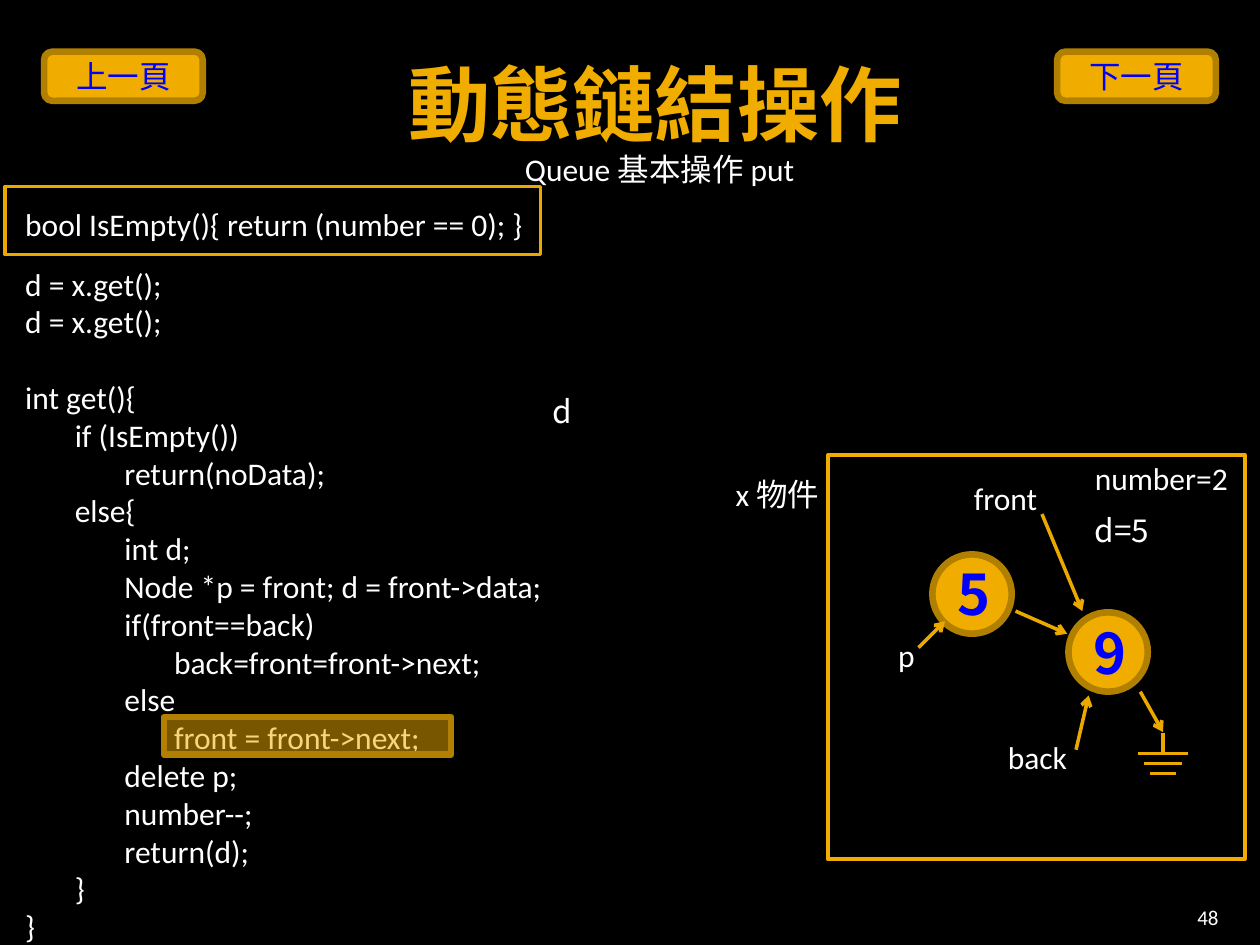
from lxml.etree import SubElement
from pptx import Presentation
from pptx.dml.color import RGBColor
from pptx.enum.shapes import MSO_CONNECTOR, MSO_SHAPE
from pptx.enum.text import MSO_ANCHOR, PP_ALIGN
from pptx.oxml.ns import qn
from pptx.util import Inches, Pt

BLACK = RGBColor(0x00, 0x00, 0x00)
WHITE = RGBColor(0xFF, 0xFF, 0xFF)
GOLD = RGBColor(0xF0, 0xAD, 0x00)
AMBER = RGBColor(0xEB, 0xA9, 0x00)
BROWN = RGBColor(0xB2, 0x80, 0x00)
BLUE = RGBColor(0x00, 0x00, 0xFF)
LATIN = "Calibri"
NOTO = "Noto Sans CJK SC"

deck = Presentation()
deck.slide_width, deck.slide_height = Inches(10), Inches(7.5)
COL = deck.slide_width / 100
ROW = deck.slide_height / 75
slide = deck.slides.add_slide(deck.slide_layouts[5])
slide.background.fill.solid()
slide.background.fill.fore_color.rgb = BLACK
shapes = slide.shapes


def place(x, y, w, h):
    return [round(n) for n in (x * COL, y * ROW, w * COL, h * ROW)]


def write(frame, words, size=18, font=LATIN, color=WHITE, bold=False, align=PP_ALIGN.LEFT):
    frame.word_wrap = True
    frame.text = words
    for para in frame.paragraphs:
        para.alignment = align
        para.font.size = Pt(size)
        para.font.name = font
        para.font.color.rgb = color
        para.font.bold = bold


title = shapes.title
title.left, title.top, title.width, title.height = place(8.2, 2.1, 87.6, 10)
write(title.text_frame, "動態鏈結操作", 47, color=GOLD, bold=True, align=PP_ALIGN.CENTER)
title.text_frame.vertical_anchor = MSO_ANCHOR.BOTTOM
title.text_frame.margin_top = title.text_frame.margin_bottom = 0

code = [
    (0, "d = x.get();"),
    (0, "d = x.get();"),
    (0, "int get(){"),
    (1, "if (IsEmpty())"),
    (2, "return(noData);"),
    (1, "else{"),
    (2, "int d;"),
    (2, "Node *p = front; d = front->data;"),
    (2, "if(front==back)"),
    (3, "back=front=front->next;"),
    (2, "else"),
    (3, "front = front->next;"),
    (2, "delete p;"),
    (2, "number--;"),
    (2, "return(d);"),
    (1, "}"),
    (0, "}"),
]
frame = shapes.add_textbox(*place(0.4, 21, 43.3, 52.2)).text_frame
write(frame, "\n".join(line for depth, line in code))
frame.margin_left = Inches(0.16)
frame.margin_top = frame.margin_right = frame.margin_bottom = 0
for para, (depth, line) in zip(frame.paragraphs, code):
    para.line_spacing = Pt(21.6)
    props = para._p.get_or_add_pPr()
    props.set("marL", str(round(depth * 3.94 * COL)))
    props.set("indent", "0")
frame.paragraphs[2].space_before = Pt(21.6)

RECT, ROUND, OVAL = MSO_SHAPE.RECTANGLE, MSO_SHAPE.ROUNDED_RECTANGLE, MSO_SHAPE.OVAL
forms = [
    (RECT, (65.7, 36.1, 33.1, 32.1), None, GOLD, 2, ""),
    (RECT, (13, 56.9, 22.8, 3), GOLD, BROWN, 3.78, ""),
    (ROUND, (83.9, 4.1, 12.6, 3.9), GOLD, BROWN, 3.78, "下一頁"),
    (ROUND, (3.5, 4.1, 12.6, 3.9), GOLD, BROWN, 3.78, "上一頁"),
    (OVAL, (74, 44, 6.3, 6.3), GOLD, BROWN, 3.78, ""),
    (OVAL, (84.8, 48.6, 6.3, 6.3), GOLD, BROWN, 3.78, ""),
    (RECT, (0.4, 14.8, 42.5, 5.4), None, AMBER, 2, "bool IsEmpty(){ return (number == 0); }"),
]
for kind, box, fill, edge, width, words in forms:
    form = shapes.add_shape(kind, *place(*box))
    form.shadow.inherit = False
    form.line.color.rgb = edge
    form.line.width = Pt(width)
    if fill:
        form.fill.solid()
        form.fill.fore_color.rgb = fill
    else:
        form.fill.background()
    frame = form.text_frame
    if kind == ROUND:
        write(frame, words, font=NOTO, color=BLUE, align=PP_ALIGN.CENTER)
        frame.vertical_anchor = MSO_ANCHOR.MIDDLE
    elif words:
        write(frame, words)
        frame.paragraphs[0].line_spacing = 1.5
        frame.vertical_anchor = MSO_ANCHOR.TOP
        frame.margin_left, frame.margin_right = Inches(0.16), Inches(0.05)
        frame.margin_top = frame.margin_bottom = 0
    elif fill and kind == RECT:
        tint = form._element.spPr.find(qn("a:solidFill"))[0]
        SubElement(tint, qn("a:alpha"), val="50000")

labels = [
    ("x 物件", (57.4, 37.2, 8.7, 4), LATIN),
    ("number=2", (85.9, 35.9, 12.8, 4), LATIN),
    ("front", (76.3, 37.5, 7.2, 4), LATIN),
    ("back", (79, 58.1, 6.9, 4), LATIN),
    ("p", (70.3, 50, 3.4, 4), LATIN),
    ("d", (42.9, 30.6, 3.6, 4), NOTO),
    ("d=5", (85.9, 40.1, 6.9, 4), NOTO),
]
for words, box, font in labels:
    write(shapes.add_textbox(*place(*box)).text_frame, words, font=font)
for digit, x, y in [("5", 75, 43.9), ("9", 85.8, 48.6)]:
    frame = shapes.add_textbox(*place(x, y, 4.7, 6.4)).text_frame
    write(frame, digit, 32, NOTO, BLUE, True)
topic = shapes.add_textbox(*place(40.5, 11.4, 23.7, 4)).text_frame
write(topic, "Queue 基本操作 put", align=PP_ALIGN.CENTER)
page = shapes.add_textbox(*place(89.7, 70.8, 8, 3)).text_frame
write(page, "48", 12, align=PP_ALIGN.RIGHT)
page.vertical_anchor = MSO_ANCHOR.BOTTOM
page.margin_bottom = 0

arrows = [
    (82.7, 40.8, 85.9, 48.5),
    (85.4, 59.5, 86.4, 55.2),
    (90.5, 54.9, 92.3, 58.1),
    (80.6, 48.5, 84.7, 50.3),
    (72.9, 51.4, 75, 49.3),
]
ground = [(92.3, 58.2, 92.3, 59.8)]
for step in range(3):
    half, y = 2 - 0.5 * step, 59.8 + 0.8 * step
    ground.append((92.3 - half, y, 92.3 + half, y))
for ends in arrows + ground:
    line = shapes.add_connector(MSO_CONNECTOR.STRAIGHT, *place(*ends))
    line.line.color.rgb = AMBER
    line.line.width = Pt(2)
    if ends in arrows:
        SubElement(line.line._get_or_add_ln(), qn("a:tailEnd"), type="arrow")
    SubElement(line._element.spPr, qn("a:effectLst"))

deck.save("out.pptx")
